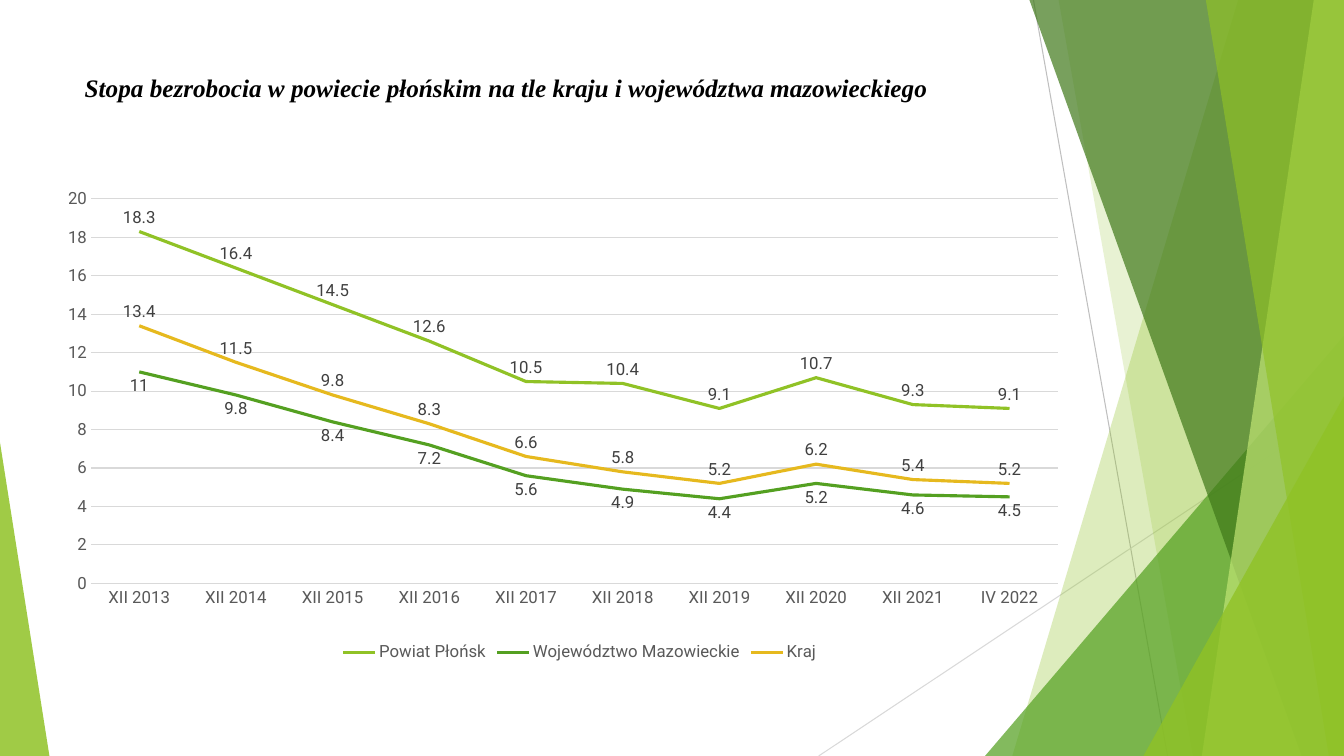
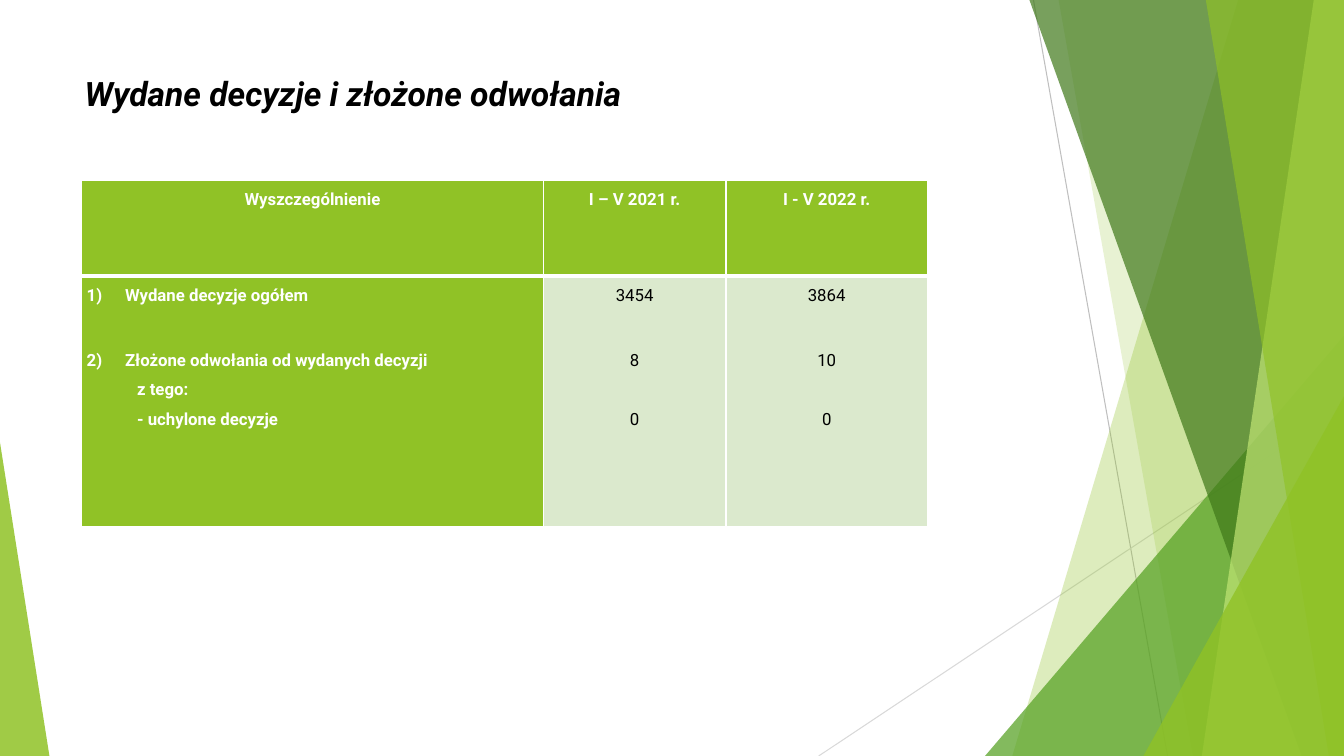
import dataclasses

import lxml.etree
import pptx
import pptx.chart.data
import pptx.dml.color
import pptx.enum.chart
import pptx.enum.shapes
import pptx.enum.text
import pptx.oxml
import pptx.oxml.ns
import pptx.util

Inches = pptx.util.Inches
Pt = pptx.util.Pt
qn = pptx.oxml.ns.qn
Align = pptx.enum.text.PP_ALIGN


@dataclasses.dataclass(frozen=True)
class Theme:
    lime: str = "90C226"
    green: str = "54A021"
    forest: str = "3F7819"
    pale_lime: str = "C0E474"
    gold: str = "E6B91E"
    mint: str = "DBE9CD"
    white: str = "FFFFFF"
    black: str = "000000"
    label_gray: str = "404040"
    axis_gray: str = "595959"
    line_gray: str = "BFBFBF"
    grid_gray: str = "D9D9D9"
    font: str = "Roboto"
    serif: str = "Times New Roman"
    body_size: int = 12
    long_title_size: int = 18
    title_size: int = 24
    hairline: float = 0.75
    series_line: float = 2.25


@dataclasses.dataclass(frozen=True)
class Box:
    left: float
    top: float
    width: float
    height: float

    @property
    def right(self):
        return self.left + self.width

    @property
    def bottom(self):
        return self.top + self.height

    def lengths(self):
        return [Inches(value) for value in dataclasses.astuple(self)]


THEME = Theme()
PAGE = Box(0, 0, 13.33, 7.5)

CATEGORIES = [f"XII {year}" for year in range(2013, 2022)] + ["IV 2022"]
RATES = [
    ("Powiat Płońsk", THEME.lime, "ABOVE",
     [18.3, 16.4, 14.5, 12.6, 10.5, 10.4, 9.1, 10.7, 9.3, 9.1]),
    ("Województwo Mazowieckie", THEME.green, "BELOW",
     [11, 9.8, 8.4, 7.2, 5.6, 4.9, 4.4, 5.2, 4.6, 4.5]),
    ("Kraj", THEME.gold, "ABOVE",
     [13.4, 11.5, 9.8, 8.3, 6.6, 5.8, 5.2, 6.2, 5.4, 5.2]),
]

HEADERS = ["Wyszczególnienie", "I – V 2021 r.", "I - V 2022 r."]
DECISIONS = [
    ("Wydane decyzje ogółem", 0, True),
    ("Złożone odwołania od wydanych decyzji", 25, True),
    ("z tego:", 0, False),
    ("- uchylone decyzje", 0, False),
]
COUNTS = [["3454", "8", "0"], ["3864", "10", "0"]]
COUNT_GAPS = [0, 25, 21]


def rgb(color):
    return pptx.dml.color.RGBColor.from_string(color)


def set_font(font, color, size=THEME.body_size, name=THEME.font, bold=False, italic=False):
    font.name, font.size, font.bold, font.italic = name, Pt(size), bold, italic
    font.color.rgb = rgb(color)


def set_line(line, color, width):
    line.color.rgb = rgb(color)
    line.width = Pt(width)


def paint(shape, color, opacity):
    shape.shadow.inherit = False
    shape.fill.solid()
    shape.fill.fore_color.rgb = rgb(color)
    shape.line.fill.background()
    for node in shape.element.iter(qn("a:srgbClr")):
        lxml.etree.SubElement(node, qn("a:alpha"), val=str(opacity * 1000))


def add_ray(shapes, start, end, color):
    points = [Inches(value) for value in (*start, *end)]
    ray = shapes.add_connector(pptx.enum.shapes.MSO_CONNECTOR.STRAIGHT, *points)
    set_line(ray.line, color, THEME.hairline)
    lxml.etree.SubElement(ray.element.spPr, qn("a:effectLst"))


def add_shard(shapes, box, top_x, bottom_x, color, opacity):
    corners = [(box.right, box.top), (box.right, box.bottom), (bottom_x, box.bottom)]
    builder = shapes.build_freeform(Inches(top_x), Inches(box.top))
    builder.add_line_segments([(Inches(x), Inches(y)) for x, y in corners], close=True)
    paint(builder.convert_to_shape(), color, opacity)


def add_triangle(shapes, box, apex, color, opacity):
    triangle = shapes.add_shape(
        pptx.enum.shapes.MSO_SHAPE.ISOSCELES_TRIANGLE, *box.lengths())
    triangle.adjustments[0] = apex
    paint(triangle, color, opacity)


def corner_box(box, width, height):
    return Box(box.right - width, box.bottom - height, width, height)


def add_backdrop(slide, box):
    group = slide.shapes.add_group_shape()
    shapes = group.shapes
    add_ray(shapes, (10.25, box.top), (11.58, box.bottom), THEME.line_gray)
    add_ray(shapes, (box.right, 4.03), (8.12, box.bottom), THEME.grid_gray)
    add_shard(shapes, box, 12.28, 10.04, THEME.lime, 30)
    add_shard(shapes, box, 10.5, 11.83, THEME.lime, 20)
    add_triangle(shapes, corner_box(box, 3.56, 4.17), 1, THEME.green, 72)
    add_shard(shapes, box, 10.21, 12.91, THEME.forest, 70)
    add_shard(shapes, box, 13.03, 11.92, THEME.pale_lime, 70)
    add_shard(shapes, box, 11.96, 13.18, THEME.lime, 65)
    add_triangle(shapes, corner_box(box, 1.99, 3.57), 1, THEME.lime, 80)
    add_triangle(shapes, Box(box.left, box.bottom - 3.11, 0.49, 3.11), 0, THEME.lime, 85)
    return group


def move_to_layout(group, layout):
    for number, properties in enumerate(group.element.iter(qn("p:cNvPr")), 100):
        properties.set("id", str(number))
    layout.shapes.element.insert(2, group.element)


def set_title(slide, box, text, size, font_name):
    title = slide.shapes.title
    title.left, title.top, title.width, title.height = box.lengths()
    frame = title.text_frame
    frame.text = text
    frame.word_wrap = True
    frame.auto_size = pptx.enum.text.MSO_AUTO_SIZE.NONE
    frame.vertical_anchor = pptx.enum.text.MSO_ANCHOR.TOP
    paragraph = frame.paragraphs[0]
    paragraph.alignment = Align.LEFT
    set_font(paragraph.font, THEME.black, size, font_name, bold=True, italic=True)


def set_plot_layout(chart, x, y, w, h):
    plot_area = chart.element.chart.plotArea
    for old_layout in plot_area.findall(qn("c:layout")):
        plot_area.remove(old_layout)
    layout = lxml.etree.Element(qn("c:layout"))
    manual = lxml.etree.SubElement(layout, qn("c:manualLayout"))
    settings = {"layoutTarget": "inner", "xMode": "edge", "yMode": "edge",
                "x": x, "y": y, "w": w, "h": h}
    for name, value in settings.items():
        lxml.etree.SubElement(manual, qn(f"c:{name}"), val=str(value))
    plot_area.insert(0, layout)


def add_rate_chart(slide, box):
    data = pptx.chart.data.CategoryChartData()
    data.categories = CATEGORIES
    for name, _, _, values in RATES:
        data.add_series(name, values)
    chart = slide.shapes.add_chart(
        pptx.enum.chart.XL_CHART_TYPE.LINE, *box.lengths(), data).chart
    set_font(chart.font, THEME.axis_gray)
    chart.has_title = False
    chart.has_legend = True
    chart.legend.position = pptx.enum.chart.XL_LEGEND_POSITION.BOTTOM
    chart.legend.include_in_layout = False
    set_font(chart.legend.font, THEME.axis_gray)
    set_plot_layout(chart, 0.04, 0.04, 0.91, 0.79)

    for axis in (chart.category_axis, chart.value_axis):
        axis.major_tick_mark = axis.minor_tick_mark = pptx.enum.chart.XL_TICK_MARK.NONE
        set_font(axis.tick_labels.font, THEME.axis_gray)
    set_line(chart.category_axis.format.line, THEME.grid_gray, THEME.hairline)
    value_axis = chart.value_axis
    value_axis.minimum_scale, value_axis.maximum_scale, value_axis.major_unit = 0, 20, 2
    value_axis.format.line.fill.background()
    value_axis.has_major_gridlines = True
    set_line(value_axis.major_gridlines.format.line, THEME.grid_gray, THEME.hairline)

    plot = chart.plots[0]
    plot.vary_by_categories = False
    for series, (_, color, position, _) in zip(plot.series, RATES):
        series.smooth = False
        set_line(series.format.line, color, THEME.series_line)
        labels = series.data_labels
        labels.show_value = True
        labels.position = pptx.enum.chart.XL_LABEL_POSITION[position]
        set_font(labels.font, THEME.label_gray)


def format_cell(cell, fill, bottom_width):
    cell.margin_left = cell.margin_right = Inches(0.05)
    cell.margin_top = cell.margin_bottom = 0
    properties = cell._tc.get_or_add_tcPr()
    for side, width in (("L", 1), ("R", 1), ("T", 1), ("B", bottom_width)):
        border = lxml.etree.SubElement(properties, qn(f"a:ln{side}"), w=str(Pt(width)))
        solid = lxml.etree.SubElement(border, qn("a:solidFill"))
        lxml.etree.SubElement(solid, qn("a:srgbClr"), val=THEME.white)
    cell.fill.solid()
    cell.fill.fore_color.rgb = rgb(fill)


def write_lines(cell, lines, alignment, color, bold):
    frame = cell.text_frame
    frame.text = "\n".join(text for text, _ in lines)
    for paragraph, (_, gap) in zip(frame.paragraphs, lines):
        paragraph.alignment = alignment
        paragraph.line_spacing = 1.5
        paragraph.space_before = Pt(gap)
        set_font(paragraph.font, color, bold=bold)


def indent(paragraph, numbered):
    properties = paragraph._p.get_or_add_pPr()
    hanging = Inches(0.38)
    properties.set("marL", str(hanging if numbered else Inches(0.5)))
    properties.set("indent", str(-hanging if numbered else 0))
    if numbered:
        number = pptx.oxml.parse_xml(
            f'<a:buAutoNum {pptx.oxml.ns.nsdecls("a")} type="arabicParenR"/>')
        properties.find(qn("a:defRPr")).addprevious(number)


def add_decision_table(slide, box):
    table = slide.shapes.add_table(2, 3, *box.lengths()).table
    table.horz_banding = False
    for column, width in zip(table.columns, (4.58, 1.81, 2)):
        column.width = Inches(width)
    header_height = 0.95
    table.rows[0].height = Inches(header_height)
    table.rows[1].height = Inches(box.height - header_height)

    for column, header in enumerate(HEADERS):
        cell = table.cell(0, column)
        format_cell(cell, THEME.lime, 3)
        write_lines(cell, [(header, 0)], Align.CENTER, THEME.white, True)

    cell = table.cell(1, 0)
    format_cell(cell, THEME.lime, 1)
    write_lines(cell, [(text, gap) for text, gap, _ in DECISIONS],
                Align.JUSTIFY, THEME.white, True)
    for paragraph, (_, _, numbered) in zip(cell.text_frame.paragraphs, DECISIONS):
        indent(paragraph, numbered)

    for column, counts in enumerate(COUNTS, 1):
        cell = table.cell(1, column)
        format_cell(cell, THEME.mint, 1)
        write_lines(cell, list(zip(counts, COUNT_GAPS)), Align.CENTER, THEME.black, False)


def main():
    presentation = pptx.Presentation()
    presentation.slide_width, presentation.slide_height = PAGE.lengths()[2:]
    layout = presentation.slide_layouts.get_by_name("Title Only")

    rate_slide = presentation.slides.add_slide(layout)
    move_to_layout(add_backdrop(rate_slide, PAGE), layout)
    set_title(rate_slide, Box(0.74, 0.67, 9.4, 1.44),
              "Stopa bezrobocia w powiecie płońskim na tle kraju i województwa mazowieckiego",
              THEME.long_title_size, THEME.serif)
    add_rate_chart(rate_slide, Box(0.48, 1.78, 10.54, 4.83))

    decision_slide = presentation.slides.add_slide(layout)
    set_title(decision_slide, Box(0.74, 0.67, 9.4, 0.84),
              "Wydane decyzje i złożone odwołania", THEME.title_size, THEME.font)
    add_decision_table(decision_slide, Box(0.81, 1.79, 8.39, 3.43))

    presentation.save("out.pptx")


if __name__ == "__main__":
    main()
